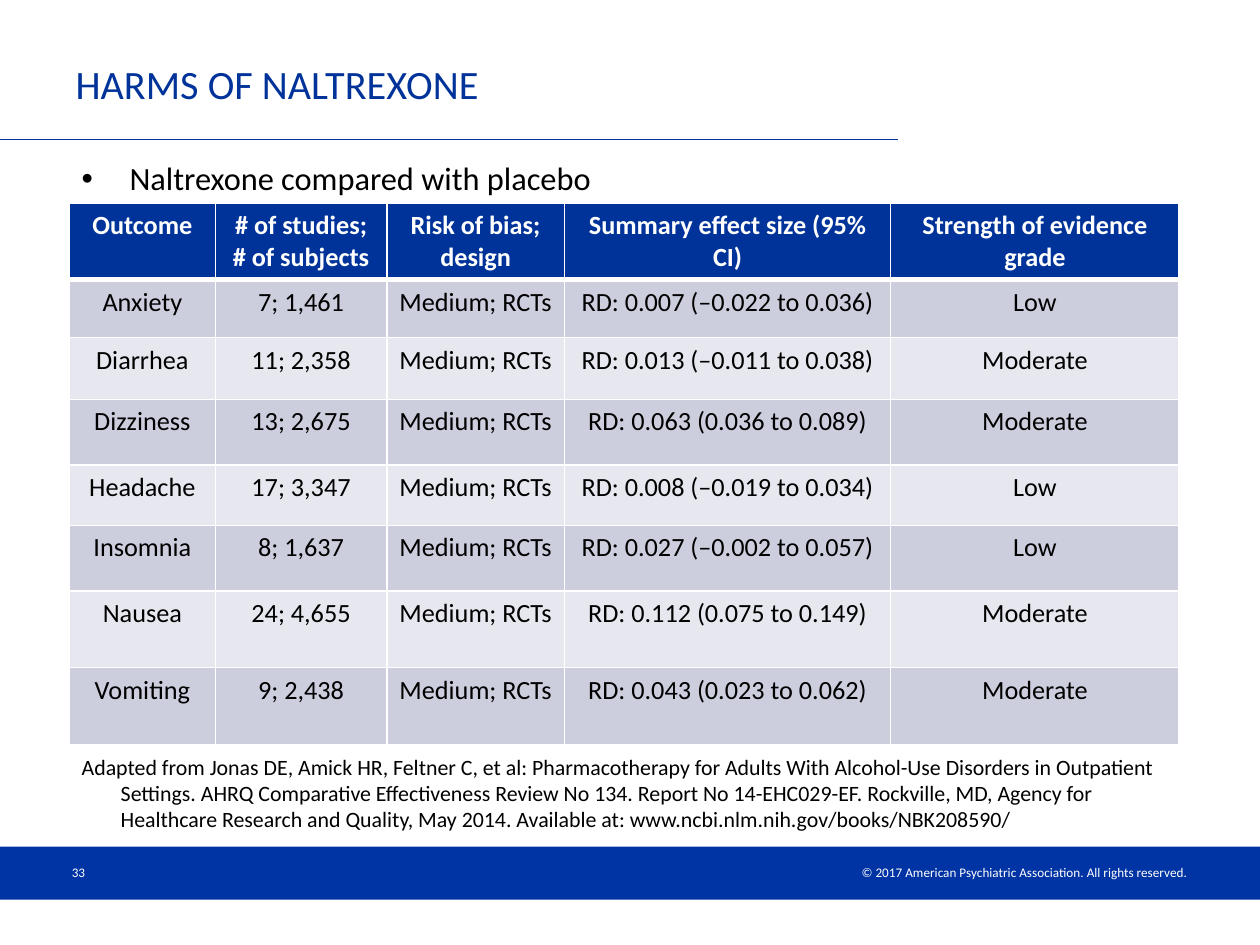
from dataclasses import dataclass, field
from typing import Any

from lxml.etree import SubElement
from pptx import Presentation
from pptx.dml.color import RGBColor
from pptx.enum.shapes import MSO_CONNECTOR as Connector, MSO_SHAPE as Shape
from pptx.enum.text import MSO_ANCHOR as Anchor, PP_ALIGN as Align
from pptx.oxml.ns import qn
from pptx.util import Inches, Pt

NAVY = RGBColor(0x00, 0x33, 0x99)
FOOTER_BLUE = RGBColor(0x00, 0x33, 0xA3)
DARK_BAND = RGBColor(0xCC, 0xCE, 0xDE)
LIGHT_BAND = RGBColor(0xE7, 0xE8, 0xEF)
WHITE = RGBColor(0xFF, 0xFF, 0xFF)
BLACK = RGBColor(0x00, 0x00, 0x00)

HEADINGS = (
    "Outcome",
    "# of studies; # of subjects",
    "Risk of bias; design",
    "Summary effect size (95% CI)",
    "Strength of evidence grade",
)
COLUMN_WIDTHS = (1.16, 1.36, 1.41, 2.59, 2.29)
HEADER_HEIGHT = 0.59


@dataclass
class Harm:
    outcome: str
    studies: str
    effect: str
    grade: str
    height: float
    bias: str = "Medium; RCTs"

    def cells(self) -> tuple[str, ...]:
        return self.outcome, self.studies, self.bias, f"RD: {self.effect}", self.grade


@dataclass
class TextBlock:
    text: str
    at: tuple[float, float, float, float]
    size: float
    color: RGBColor = BLACK
    align: Align = Align.LEFT
    frame: dict[str, Any] = field(default_factory=dict)
    hanging: float = 0
    bullet: str = ""


HARMS = (
    Harm("Anxiety", "7; 1,461", "0.007 (–0.022 to 0.036)", "Low", 0.46),
    Harm("Diarrhea", "11; 2,358", "0.013 (–0.011 to 0.038)", "Moderate", 0.49),
    Harm("Dizziness", "13; 2,675", "0.063 (0.036 to 0.089)", "Moderate", 0.52),
    Harm("Headache", "17; 3,347", "0.008 (–0.019 to 0.034)", "Low", 0.48),
    Harm("Insomnia", "8; 1,637", "0.027 (–0.002 to 0.057)", "Low", 0.52),
    Harm("Nausea", "24; 4,655", "0.112 (0.075 to 0.149)", "Moderate", 0.61),
    Harm("Vomiting", "9; 2,438", "0.043 (0.023 to 0.062)", "Moderate", 0.61),
)

TITLE = TextBlock("HARMS OF NALTREXONE", (0.5, 0.34, 6.63, 0.64), 23, NAVY,
                  frame={"vertical_anchor": Anchor.MIDDLE})
TEXT_BLOCKS = (
    TextBlock("© 2017 American Psychiatric Association. All rights reserved.",
              (5.18, 6.81, 4.34, 0.23), 7.5, WHITE, Align.RIGHT,
              {"vertical_anchor": Anchor.MIDDLE}),
    TextBlock("33", (0.5, 6.72, 2.33, 0.4), 7.5, WHITE,
              frame={"vertical_anchor": Anchor.MIDDLE,
                     "margin_left": Inches(0.07), "margin_right": Inches(0.07),
                     "margin_top": Inches(0.04), "margin_bottom": Inches(0.04)}),
    TextBlock("Naltrexone compared with placebo", (0.55, 1.21, 8.55, 0.36), 18.5,
              hanging=0.38, bullet="•"),
    TextBlock(
        "Adapted from Jonas DE, Amick HR, Feltner C, et al: Pharmacotherapy for Adults "
        "With Alcohol-Use Disorders in Outpatient Settings. AHRQ Comparative Effectiveness "
        "Review No 134. Report No 14-EHC029-EF. Rockville, MD, Agency for Healthcare "
        "Research and Quality, May 2014. Available at: www.ncbi.nlm.nih.gov/books/NBK208590/",
        (0.55, 5.93, 8.89, 0.76), 12.5, hanging=0.31),
)


def set_all(target: Any, values: dict[str, Any]) -> None:
    for name, value in values.items():
        setattr(target, name, value)


def format_font(font: Any, size: float, color: RGBColor, bold: bool = False) -> None:
    set_all(font, {"name": "Calibri", "size": Pt(size), "bold": bold})
    font.color.rgb = color


def place_text(box: Any, block: TextBlock) -> None:
    names = ("left", "top", "width", "height")
    set_all(box, dict(zip(names, map(Inches, block.at))))
    set_all(box.text_frame, {"word_wrap": True, **block.frame})
    para = box.text_frame.paragraphs[0]
    para.alignment = block.align
    if block.hanging:
        props = para._p.get_or_add_pPr()
        props.set("marL", str(Inches(block.hanging)))
        props.set("indent", str(-Inches(block.hanging)))
        if block.bullet:
            SubElement(props, qn("a:buFont"), typeface="Arial")
            SubElement(props, qn("a:buChar"), char=block.bullet)
    span = para.add_run()
    span.text = block.text
    format_font(span.font, block.size, block.color)


def set_borders(cell: Any, widths: dict[str, float]) -> None:
    props = cell._tc.get_or_add_tcPr()
    for index, (side, width) in enumerate(widths.items()):
        line = props.makeelement(qn(f"a:{side}"), {"w": str(Pt(width))})
        fill = SubElement(line, qn("a:solidFill"))
        SubElement(fill, qn("a:srgbClr"), val=str(WHITE))
        props.insert(index, line)


def add_harms_table(page: Any) -> None:
    rows = (HEADINGS, *(harm.cells() for harm in HARMS))
    heights = (HEADER_HEIGHT, *(harm.height for harm in HARMS))
    table = page.shapes.add_table(
        len(rows), len(HEADINGS), Inches(0.55), Inches(1.61),
        Inches(sum(COLUMN_WIDTHS)), Inches(sum(heights))).table
    for column, width in zip(table.columns, COLUMN_WIDTHS):
        column.width = Inches(width)
    for index, (texts, height) in enumerate(zip(rows, heights)):
        table.rows[index].height = Inches(height)
        header = index == 0
        band = NAVY if header else DARK_BAND if index % 2 else LIGHT_BAND
        borders = {"lnL": 1, "lnR": 1, "lnT": 3 if index == 1 else 1,
                   "lnB": 3 if header else 1}
        for cell, text in zip(table.rows[index].cells, texts):
            cell.text = text
            cell.fill.solid()
            cell.fill.fore_color.rgb = band
            set_borders(cell, borders)
            para = cell.text_frame.paragraphs[0]
            para.alignment = Align.CENTER
            format_font(para.runs[0].font, 15, WHITE if header else BLACK, header)


def add_furniture(page: Any) -> None:
    footer = page.shapes.add_shape(
        Shape.RECTANGLE, 0, Inches(6.72), Inches(10), Inches(0.42))
    footer.shadow.inherit = False
    footer.fill.solid()
    footer.fill.fore_color.rgb = FOOTER_BLUE
    footer.line.fill.background()
    rule = page.shapes.add_connector(
        Connector.STRAIGHT, 0, Inches(1.11), Inches(7.13), Inches(1.11))
    rule.line.color.rgb = NAVY
    rule.line.width = Pt(0.75)
    SubElement(rule._element.spPr, qn("a:effectLst"))


def main() -> None:
    deck = Presentation()
    set_all(deck, {"slide_width": Inches(10), "slide_height": Inches(7.5)})
    page = deck.slides.add_slide(deck.slide_layouts[5])
    add_furniture(page)
    place_text(page.shapes.title, TITLE)
    add_harms_table(page)
    for block in TEXT_BLOCKS:
        place_text(page.shapes.add_textbox(*map(Inches, block.at)), block)
    deck.save("out.pptx")


if __name__ == "__main__":
    main()
